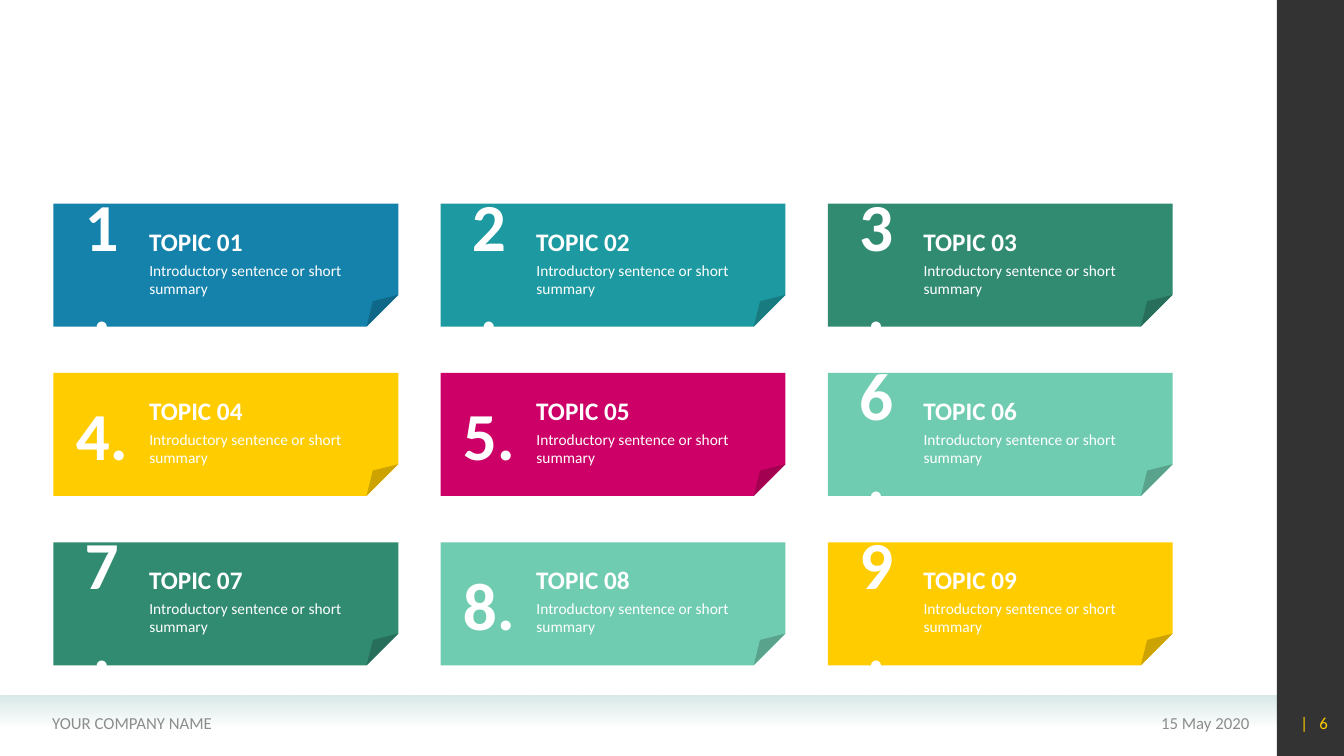
from lxml.etree import SubElement
from pptx import Presentation
from pptx.dml.color import RGBColor
from pptx.enum.shapes import MSO_SHAPE
from pptx.enum.text import MSO_ANCHOR, MSO_AUTO_SIZE, PP_ALIGN
from pptx.oxml.ns import qn
from pptx.util import Inches, Pt

WIDTH, HEIGHT = 13.33, 7.5
COLUMNS = 3
GRID_LEFT, GRID_TOP = 0.53, 2.02
COLUMN_PITCH, ROW_PITCH = 3.84, 1.68
CARD_WIDTH, CARD_HEIGHT = 3.42, 1.22
NUMBER_CENTER = 0.48
NARROW, WIDE = 0.7, 0.74
FOOTER_TOP, FOOTER_HEIGHT = 6.97, 0.4
BAR_LEFT = 0.95 * WIDTH

COLORS = {
    "blue": "1482AB",
    "teal": "1D9AA1",
    "green": "318B71",
    "yellow": "FFCC00",
    "magenta": "CC0066",
    "mint": "70CCB1",
    "white": "FFFFFF",
    "gray": "8C8C8C",
    "haze": "D9E9E8",
    "black": "000000",
}
CARDS = [
    ("blue", NARROW), ("teal", NARROW), ("green", NARROW),
    ("yellow", WIDE), ("magenta", WIDE), ("mint", NARROW),
    ("green", NARROW), ("mint", WIDE), ("yellow", NARROW),
]
SUMMARY = "Introductory sentence or short summary"


def color_of(name):
    return RGBColor.from_string(COLORS[name])


def set_alpha(color_element, percent):
    SubElement(color_element, qn("a:alpha")).set("val", str(percent * 1000))


def set_fold(card, percent):
    values = next(card.element.spPr.iter(qn("a:avLst")))
    guide = SubElement(values, qn("a:gd"))
    guide.set("name", "adj")
    guide.set("fmla", f"val {percent * 1000:.0f}")


def add_block(slide, kind, left, top, width, height, color):
    shape = slide.shapes.add_shape(
        kind, Inches(left), Inches(top), Inches(width), Inches(height))
    shape.shadow.inherit = False
    shape.line.fill.background()
    shape.fill.solid()
    shape.fill.fore_color.rgb = color_of(color)
    return shape


def add_text(slide, text, left, top, width, height, size, color="white",
             bold=False, align=PP_ALIGN.LEFT, anchor=MSO_ANCHOR.MIDDLE,
             auto_size=MSO_AUTO_SIZE.NONE):
    box = slide.shapes.add_textbox(
        Inches(left), Inches(top), Inches(width), Inches(height))
    frame = box.text_frame
    frame.word_wrap = True
    frame.auto_size = auto_size
    frame.vertical_anchor = anchor
    paragraph = frame.paragraphs[0]
    paragraph.text = text
    paragraph.alignment = align
    paragraph.font.name = "Calibri"
    paragraph.font.size = Pt(size)
    paragraph.font.bold = bold
    paragraph.font.color.rgb = color_of(color)
    return frame


def add_summary(slide, left, top):
    frame = add_text(slide, SUMMARY, left, top, 2.19, 0.4, 11,
                     anchor=MSO_ANCHOR.TOP)
    frame.margin_left = frame.margin_right = Inches(0.04)
    frame.margin_top = frame.margin_bottom = Inches(0.02)
    paragraph = frame.paragraphs[0]
    paragraph.line_spacing = Pt(12.9)
    paragraph.space_before = Pt(2.2)


def add_card(slide, index, color, number_width):
    row, column = divmod(index, COLUMNS)
    left = GRID_LEFT + column * COLUMN_PITCH
    top = GRID_TOP + row * ROW_PITCH
    card = add_block(slide, MSO_SHAPE.FOLDED_CORNER, left, top,
                     CARD_WIDTH, CARD_HEIGHT, color)
    set_fold(card, 25.8)
    add_text(slide, f"TOPIC {index + 1:02}", left + 0.85, top + 0.17, 1.2, 0.4,
             18, bold=True, anchor=MSO_ANCHOR.BOTTOM)
    add_summary(slide, left + 0.91, top + 0.55)
    add_text(slide, f"{index + 1}.", left + NUMBER_CENTER - number_width / 2,
             top + 0.15, number_width, 0.91, 48, bold=True,
             align=PP_ALIGN.CENTER, auto_size=MSO_AUTO_SIZE.SHAPE_TO_FIT_TEXT)


def add_frame(slide):
    haze = add_block(slide, MSO_SHAPE.RECTANGLE, 0, 0.92 * HEIGHT,
                     BAR_LEFT, 0.31, "haze")
    haze.fill.gradient()
    haze.fill.gradient_angle = 270
    for stop in haze.fill.gradient_stops:
        stop.color.rgb = color_of("haze")
    colors = list(haze.element.spPr.iter(qn("a:srgbClr")))
    set_alpha(colors[-1], 0)
    bar = add_block(slide, MSO_SHAPE.RECTANGLE, BAR_LEFT, 0,
                    WIDTH - BAR_LEFT, HEIGHT, "black")
    set_alpha(next(bar.element.spPr.iter(qn("a:srgbClr"))), 80)


def add_footer(slide):
    for text, left, width, color, align in [
        ("15 May 2020", 9.1, 3.39, "gray", PP_ALIGN.RIGHT),
        ("YOUR COMPANY NAME", 0.42, 4.9, "gray", PP_ALIGN.LEFT),
        ("|   6", 12.6, 0.67, "yellow", PP_ALIGN.RIGHT),
    ]:
        add_text(slide, text, left, FOOTER_TOP, width, FOOTER_HEIGHT, 12,
                 color, align=align)


def main():
    presentation = Presentation()
    presentation.slide_width = Inches(WIDTH)
    presentation.slide_height = Inches(HEIGHT)
    slide = presentation.slides.add_slide(presentation.slide_layouts[6])
    add_frame(slide)
    add_footer(slide)
    for index, (color, number_width) in enumerate(CARDS):
        add_card(slide, index, color, number_width)
    presentation.save("out.pptx")


if __name__ == "__main__":
    main()
